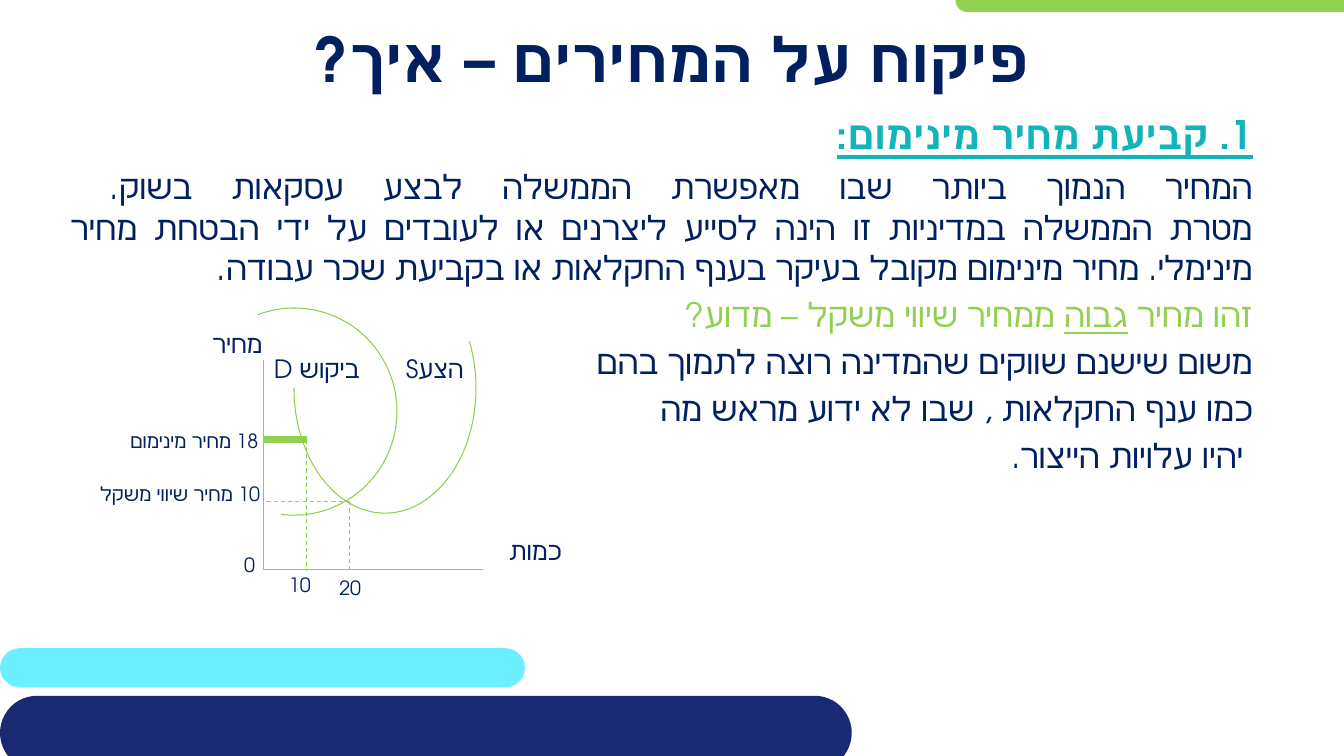
from lxml import etree
from pptx import Presentation
from pptx.dml.color import RGBColor
from pptx.enum.dml import MSO_LINE
from pptx.enum.shapes import MSO_CONNECTOR, MSO_SHAPE
from pptx.enum.text import MSO_ANCHOR, MSO_AUTO_SIZE, PP_ALIGN
from pptx.oxml.ns import qn
from pptx.util import Pt

STRAIGHT = MSO_CONNECTOR.STRAIGHT
ROUNDED, ARC = MSO_SHAPE.ROUNDED_RECTANGLE, MSO_SHAPE.ARC
CENTER, RIGHT, JUSTIFY = PP_ALIGN.CENTER, PP_ALIGN.RIGHT, PP_ALIGN.JUSTIFY
DASH = MSO_LINE.DASH
FONT = "TeX Gyre Adventor"
NAVY, TEAL, GREEN, CURVE_GREEN = "002060", "12B4BC", "92D050", "8FCF4B"

TITLE = "פיקוח על המחירים – איך?"
HEADING = "1. קביעת מחיר מינימום:"
# Each paragraph: alignment, colour, pieces of text
BODY = [
    (JUSTIFY, TEAL, [HEADING]),
    (JUSTIFY, NAVY, [
        "המחיר הנמוך ביותר שבו מאפשרת הממשלה לבצע עסקאות בשוק. ",
        "\n",
        "מטרת הממשלה במדיניות זו הינה לסייע ליצרנים או לעובדים על ידי הבטחת "
        "מחיר מינימלי. מחיר מינימום מקובל בעיקר בענף החקלאות או בקביעת שכר עבודה.",
    ]),
    (JUSTIFY, GREEN, ["זהו מחיר ", "גבוה", " ממחיר שיווי משקל – מדוע?"]),
    (RIGHT, NAVY, ["משום שישנם שווקים שהמדינה רוצה לתמוך בהם "]),
    (RIGHT, NAVY, ["כמו ענף החקלאות , שבו לא ידוע מראש מה"]),
    (RIGHT, NAVY, [" יהיו עלויות הייצור."]),
]
UNDERLINED = {HEADING, "גבוה"}

# Bands: left, top, width, height, colour
BANDS = [
    (0, 463, 375, 28, "6CF0FF"),
    (682.5, -8.6, 417.6, 17.3, GREEN),
    (0, 497, 608.4, 53, "192A72"),
]

# Diagram landmarks
AXIS_X, AXIS_Y = 188, 407
AXIS_TOP, AXIS_RIGHT = 257, 345
EQUILIBRIUM_X, EQUILIBRIUM_Y = 250, 358
MINIMUM_X, MINIMUM_Y = 219, 314
# Lines: start, end, colour, width, dash
DIAGRAM_LINES = [
    ((AXIS_X, AXIS_TOP), (AXIS_X, AXIS_Y), CURVE_GREEN, 0.75, None),
    ((AXIS_X, AXIS_Y), (AXIS_RIGHT, AXIS_Y), CURVE_GREEN, 0.75, None),
    ((EQUILIBRIUM_X, EQUILIBRIUM_Y), (AXIS_X, EQUILIBRIUM_Y), GREEN, 0.75, DASH),
    ((EQUILIBRIUM_X, EQUILIBRIUM_Y), (EQUILIBRIUM_X, AXIS_Y), CURVE_GREEN, 0.75, DASH),
    ((AXIS_X, MINIMUM_Y), (MINIMUM_X, MINIMUM_Y), GREEN, 4.5, None),
    ((MINIMUM_X, MINIMUM_Y), (MINIMUM_X, AXIS_Y), CURVE_GREEN, 0.75, DASH),
]
# Curves: left, top, width, height, rotation, start angle
CURVES = [
    (210, 188, 130, 178.5, 180, 150.94),
    (136, 220.5, 148, 147, 97.2, 152.11),
]
# Labels: text, left, top, width, font size
LABELS = [
    ("מחיר", 140.5, 231, 54, 18),
    ("כמות", 353.5, 378.7, 54.7, 18),
    ("ביקוש D", 185, 249, 79, 18),
    ("הצעS ", 274.3, 249, 64, 18),
    ("18 מחיר מינימום", 75.6, 303, 116, 14),
    ("10 מחיר שיווי משקל", 55.4, 340.5, 137.5, 14),
    ("0", 166.3, 391.7, 23, 14),
    ("10", 196.6, 406, 32.4, 14),
    ("20", 232.6, 407.5, 32.4, 14),
]
LABEL_HEIGHT = {18: 29, 14: 24.5}


def rgb(color):
    return RGBColor.from_string(color)


def place(shape, left, top, width, height):
    shape.left, shape.top = Pt(left), Pt(top)
    shape.width, shape.height = Pt(width), Pt(height)


def set_rtl(paragraph, align):
    paragraph.alignment = align
    paragraph._p.get_or_add_pPr().set("rtl", "1")


def style_run(run, size, color, bold=False, underline=False):
    """Format a run, using the same face for Latin and Hebrew letters."""
    font = run.font
    font.size, font.bold, font.underline = Pt(size), bold, underline
    font.color.rgb = rgb(color)
    font.name = FONT
    etree.SubElement(run._r.get_or_add_rPr(), qn("a:cs")).set("typeface", FONT)


def add_title(slide):
    title = slide.shapes.title
    place(title, 174.5, 0, 611, 83)
    frame = title.text_frame
    frame.text = TITLE
    frame.auto_size = MSO_AUTO_SIZE.NONE
    frame.vertical_anchor = MSO_ANCHOR.MIDDLE
    set_rtl(frame.paragraphs[0], CENTER)
    style_run(frame.paragraphs[0].runs[0], 44, NAVY, bold=True)


def add_body(slide):
    body = slide.placeholders[1]
    place(body, 43, 75, 859, 305)
    frame = body.text_frame
    frame.auto_size = MSO_AUTO_SIZE.NONE
    for index, (align, color, pieces) in enumerate(BODY):
        paragraph = frame.add_paragraph() if index else frame.paragraphs[0]
        set_rtl(paragraph, align)
        properties = paragraph._p.get_or_add_pPr()
        properties.set("marL", "0")
        properties.set("indent", "0")
        if index == 0:
            paragraph.space_before = Pt(0)
        etree.SubElement(properties, qn("a:buNone"))
        for piece in pieces:
            if piece == "\n":
                paragraph.add_line_break()
                continue
            run = paragraph.add_run()
            run.text = piece
            is_heading = piece == HEADING
            style_run(run, 28 if is_heading else 24, color, is_heading, piece in UNDERLINED)


def add_bands(slide):
    for *box, color in BANDS:
        band = slide.shapes.add_shape(ROUNDED, *map(Pt, box))
        band.adjustments[0] = 0.5
        band.shadow.inherit = False
        band.fill.solid()
        band.fill.fore_color.rgb = rgb(color)
        band.line.fill.background()


def add_diagram(slide):
    for start, end, color, width, dash in DIAGRAM_LINES:
        line = slide.shapes.add_connector(STRAIGHT, *map(Pt, start + end))
        line.line.color.rgb = rgb(color)
        line.line.width = Pt(width)
        if dash:
            line.line.dash_style = dash
        etree.SubElement(line._element.spPr, qn("a:effectLst"))

    for *box, rotation, start_angle in CURVES:
        curve = slide.shapes.add_shape(ARC, *map(Pt, box))
        # Angles are stored in 1/60000 degree, adjustments in 1/100000
        curve.adjustments[0] = start_angle * 0.6
        curve.adjustments[1] = 0
        curve.rotation = rotation
        curve.shadow.inherit = False
        curve.fill.background()
        curve.line.color.rgb = rgb(CURVE_GREEN)
        curve.line.width = Pt(0.75)

    for text, left, top, width, size in LABELS:
        label = slide.shapes.add_textbox(Pt(left), Pt(top), Pt(width), Pt(LABEL_HEIGHT[size]))
        frame = label.text_frame
        frame.text = text
        frame.word_wrap = False
        frame.auto_size = MSO_AUTO_SIZE.SHAPE_TO_FIT_TEXT
        set_rtl(frame.paragraphs[0], RIGHT)
        style_run(frame.paragraphs[0].runs[0], size, NAVY)


def main():
    presentation = Presentation()
    presentation.slide_width, presentation.slide_height = Pt(960), Pt(540)
    slide = presentation.slides.add_slide(presentation.slide_layouts[1])
    add_bands(slide)
    add_body(slide)
    add_title(slide)
    add_diagram(slide)
    presentation.save("out.pptx")


if __name__ == "__main__":
    main()
